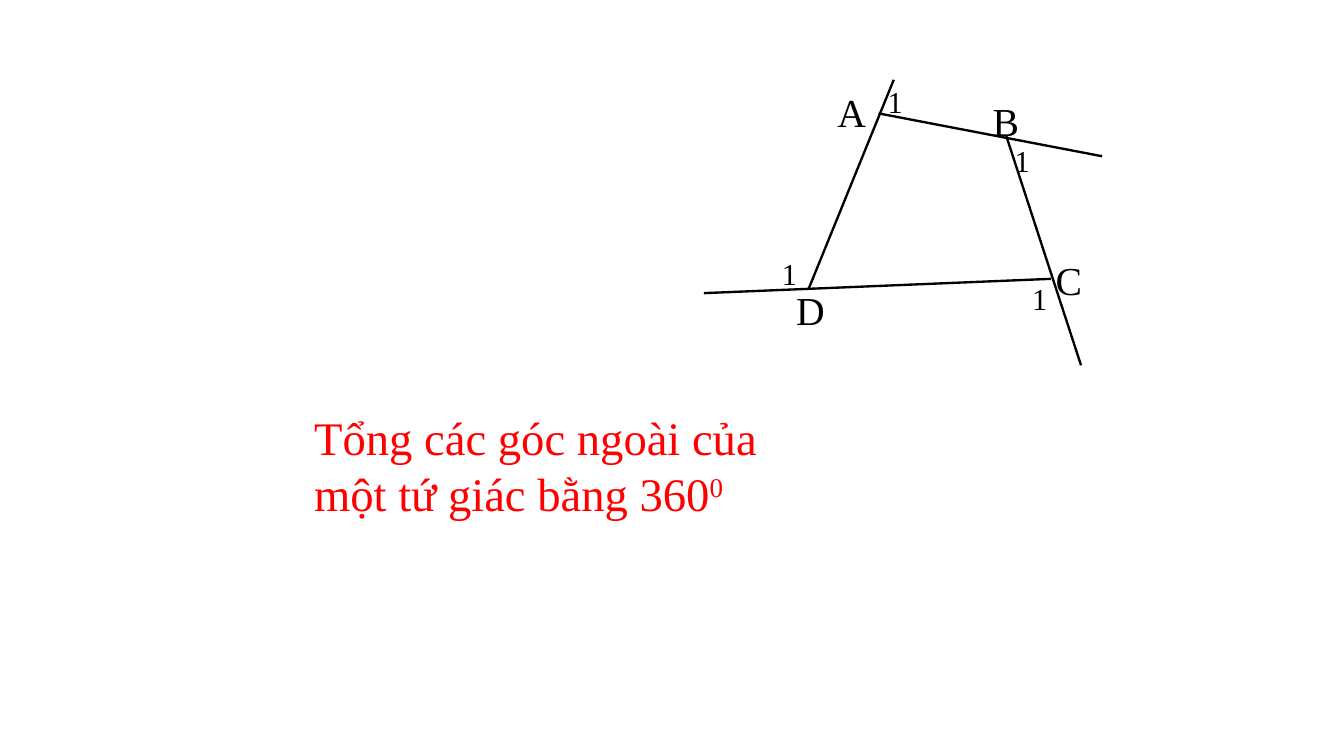
from lxml import etree
from pptx import Presentation
from pptx.dml.color import RGBColor
from pptx.enum.shapes import MSO_CONNECTOR
from pptx.enum.text import MSO_AUTO_SIZE
from pptx.oxml.ns import qn
from pptx.util import Inches, Pt

STRAIGHT = MSO_CONNECTOR.STRAIGHT
GROW = MSO_AUTO_SIZE.SHAPE_TO_FIT_TEXT
BLACK = RGBColor(0x00, 0x00, 0x00)
RED = RGBColor(0xFF, 0x00, 0x00)
FONT = "Times New Roman"

presentation = Presentation()
presentation.slide_width = Inches(16)
presentation.slide_height = Inches(9)
COLUMN = presentation.slide_width / 16
ROW = presentation.slide_height / 9
slide = presentation.slides.add_slide(presentation.slide_layouts[6])


def add_run(paragraph, text, size, color):
    run = paragraph.add_run()
    run.text = text
    run.font.name = FONT
    run.font.size = Pt(size)
    run.font.color.rgb = color
    return run


def add_text(left, top, width, height, text, size, color):
    box = slide.shapes.add_textbox(
        int(left * COLUMN), int(top * ROW), int(width * COLUMN), int(height * ROW)
    )
    frame = box.text_frame
    frame.word_wrap = True
    frame.auto_size = GROW
    add_run(frame.paragraphs[0], text, size, color)
    return frame


extended_sides = [
    (10.64, 0.95, 9.63, 3.43),
    (8.38, 3.49, 12.51, 3.32),
    (12.87, 4.35, 11.98, 1.62),
    (10.46, 1.35, 13.12, 1.86),
]
for start_x, start_y, end_x, end_y in extended_sides:
    side = slide.shapes.add_connector(
        STRAIGHT,
        int(start_x * COLUMN), int(start_y * ROW),
        int(end_x * COLUMN), int(end_y * ROW),
    )
    side.line.color.rgb = BLACK
    side.line.width = Pt(2)
    etree.SubElement(side._element.spPr, qn("a:effectLst"))

vertex_labels = [
    ("D", 9.38, 3.36, 0.56),
    ("A", 9.87, 1, 0.67),
    ("B", 11.72, 1.11, 0.67),
    ("C", 12.47, 3, 0.57),
]
for letter, left, top, width in vertex_labels:
    add_text(left, top, width, 0.67, letter, 34, BLACK)

exterior_angles = [(12.19, 3.29), (9.21, 2.99), (10.47, 0.94), (11.98, 1.64)]
for left, top in exterior_angles:
    add_text(left, top, 0.56, 0.54, "1", 26, BLACK)

theorem = add_text(
    3.6, 4.8, 6.27, 1.49, "Tổng các góc ngoài của một tứ giác bằng 360", 40, RED
)
theorem.margin_left = theorem.margin_right = Inches(0.14)
theorem.margin_top = theorem.margin_bottom = Inches(0.07)
degree = add_run(theorem.paragraphs[0], "0", 40, RED)
degree.font._element.set("baseline", "30000")

presentation.save("out.pptx")
